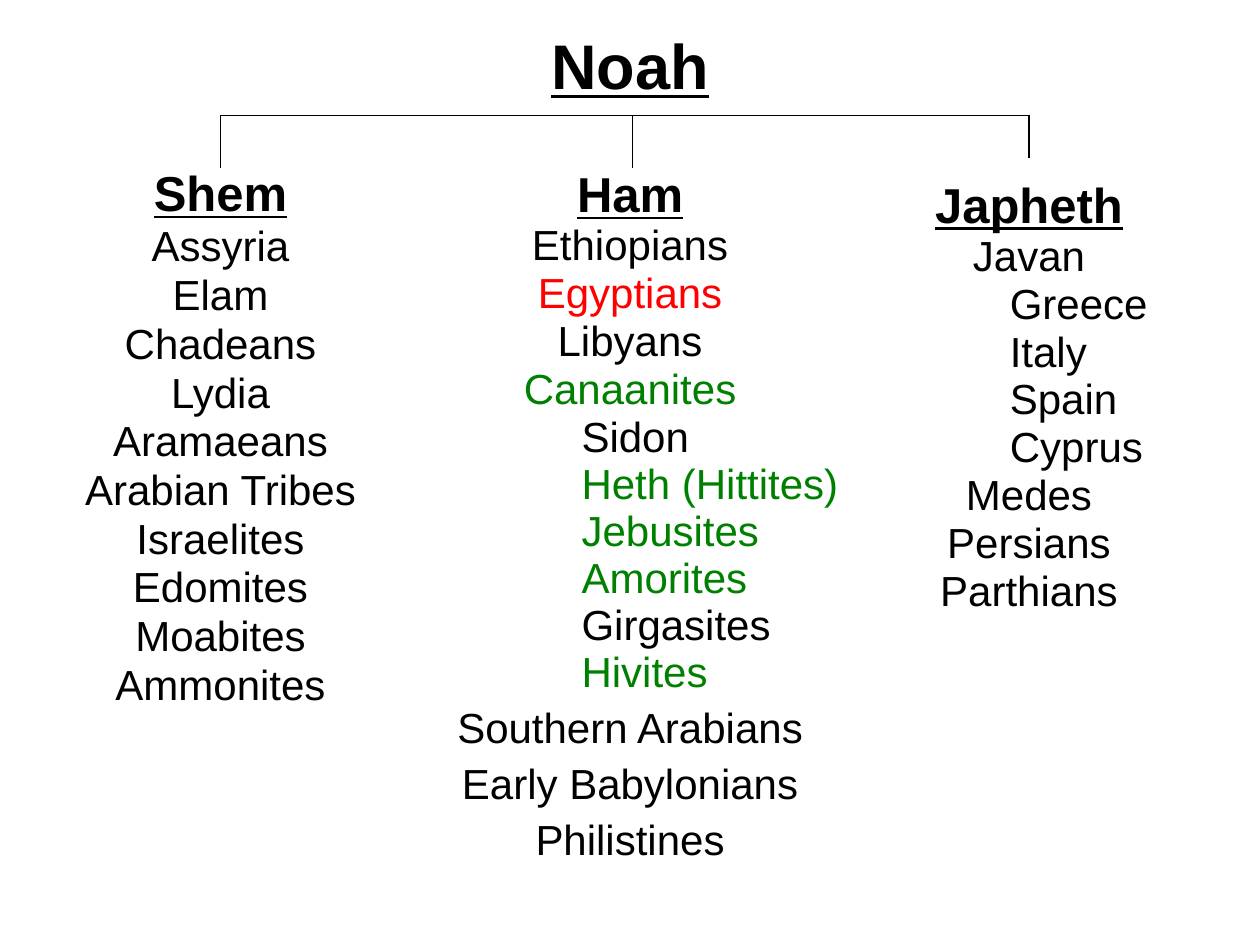
"""Build the slide showing the family tree of Noah's three sons."""
from pptx import Presentation
from pptx import util as u
from pptx.dml.color import RGBColor
from pptx.enum import shapes, text
from pptx.oxml.ns import qn
from lxml import etree

BLACK = RGBColor(0x00, 0x00, 0x00)
RED = RGBColor(0xFF, 0x00, 0x00)
GREEN = RGBColor(0x00, 0x80, 0x00)
WHITE = RGBColor(0xFF, 0xFF, 0xFF)

SHEM = ["Assyria", "Elam", "Chadeans", "Lydia", "Aramaeans", "Arabian Tribes",
        "Israelites", "Edomites", "Moabites", "Ammonites"]
HAM_NATIONS = [("Ethiopians", BLACK), ("Egyptians", RED),
               ("Libyans", BLACK), ("Canaanites", GREEN)]
CANAAN = [("Sidon", BLACK), ("Heth (Hittites)", GREEN), ("Jebusites", GREEN),
          ("Amorites", GREEN), ("Girgasites", BLACK), ("Hivites", GREEN)]
HAM_LATER = ["Southern Arabians", "Early Babylonians", "Philistines"]
JAVAN = ["Greece", "Italy", "Spain", "Cyprus"]


class FamilyTree:
    """Draws on one slide, with lengths in cells of a 120 by 90 grid."""

    font = "Arial"
    title_size, heading_size, body_size = 36, 28, 24

    def __init__(self, presentation):
        self.cell = presentation.slide_width / 120
        self.slide = presentation.slides.add_slide(presentation.slide_layouts[5])
        self.slide.background.fill.solid()
        self.slide.background.fill.fore_color.rgb = WHITE

    def cells(self, *counts):
        return [u.Emu(round(count * self.cell)) for count in counts]

    def run(self, paragraph, words, size, color=BLACK, heading=False):
        run = paragraph.add_run()
        run.text = words
        run.font.name = self.font
        run.font.size = u.Pt(size)
        run.font.color.rgb = color
        run.font.bold = run.font.underline = heading

    def title(self, words, column, row, width, height):
        shape = self.slide.shapes.title
        shape.left, shape.top, shape.width, shape.height = self.cells(column, row, width, height)
        frame = shape.text_frame
        frame.auto_size = text.MSO_AUTO_SIZE.NONE
        frame.vertical_anchor = text.MSO_ANCHOR.MIDDLE
        paragraph = frame.paragraphs[0]
        paragraph.alignment = text.PP_ALIGN.CENTER
        self.run(paragraph, words, self.title_size, heading=True)

    def branch(self, son, column, row, width, height, heading_spacing=1.0):
        shape = self.slide.shapes.add_textbox(*self.cells(column, row, width, height))
        frame = shape.text_frame
        frame.word_wrap = True
        paragraph = frame.paragraphs[0]
        paragraph.alignment = text.PP_ALIGN.CENTER
        paragraph.line_spacing = heading_spacing
        paragraph.space_before = u.Pt(0.2 * self.heading_size)
        self.run(paragraph, son, self.heading_size, heading=True)
        return frame

    def people(self, frame, name, color=BLACK, spacing=0.95, before=0.0, tab=None):
        paragraph = frame.add_paragraph()
        paragraph.line_spacing = spacing
        paragraph.space_before = u.Pt(before * self.body_size)
        if tab is None:
            paragraph.alignment = text.PP_ALIGN.CENTER
        else:
            paragraph.alignment = text.PP_ALIGN.LEFT
            properties = paragraph._p.get_or_add_pPr()
            stops = etree.SubElement(properties, qn("a:tabLst"))
            etree.SubElement(stops, qn("a:tab"), pos=str(self.cells(tab)[0]), algn="l")
            self.run(paragraph, "\t", self.body_size)
        self.run(paragraph, name, self.body_size, color)

    def line(self, *ends):
        connector = self.slide.shapes.add_connector(
            shapes.MSO_CONNECTOR.STRAIGHT, *self.cells(*ends))
        connector.line.color.rgb = BLACK
        connector.line.width = u.Pt(0.75)
        etree.SubElement(connector._element.spPr, qn("a:effectLst"))


def main():
    presentation = Presentation()
    presentation.slide_width, presentation.slide_height = u.Inches(10), u.Inches(7.5)
    tree = FamilyTree(presentation)
    tree.title("Noah", 38, 0, 44, 12.25)

    shem = tree.branch("Shem", 6, 16, 30, 56, heading_spacing=0.8)
    for name in SHEM:
        tree.people(shem, name, spacing=0.8, before=0.2)

    ham = tree.branch("Ham", 37, 15, 46, 70)
    for name, color in HAM_NATIONS:
        tree.people(ham, name, color)
    for name, color in CANAAN:
        tree.people(ham, name, color, spacing=0.85, before=0.1, tab=17.2)
    for name in HAM_LATER:
        tree.people(ham, name, before=0.2)

    japheth = tree.branch("Japheth", 83, 16, 30, 13)
    tree.people(japheth, "Javan")
    for name in JAVAN:
        tree.people(japheth, name, tab=12)
    for name in ("Medes", "Persians"):
        tree.people(japheth, name)
    tree.people(japheth, "Parthians", spacing=0.85, before=0.1)

    bar_row = 11
    tree.line(21, bar_row, 98, bar_row)
    for column, bottom in ((21, 16), (98, 15), (60.25, 16)):
        tree.line(column, bar_row, column, bottom)
    presentation.save("out.pptx")


if __name__ == "__main__":
    main()
